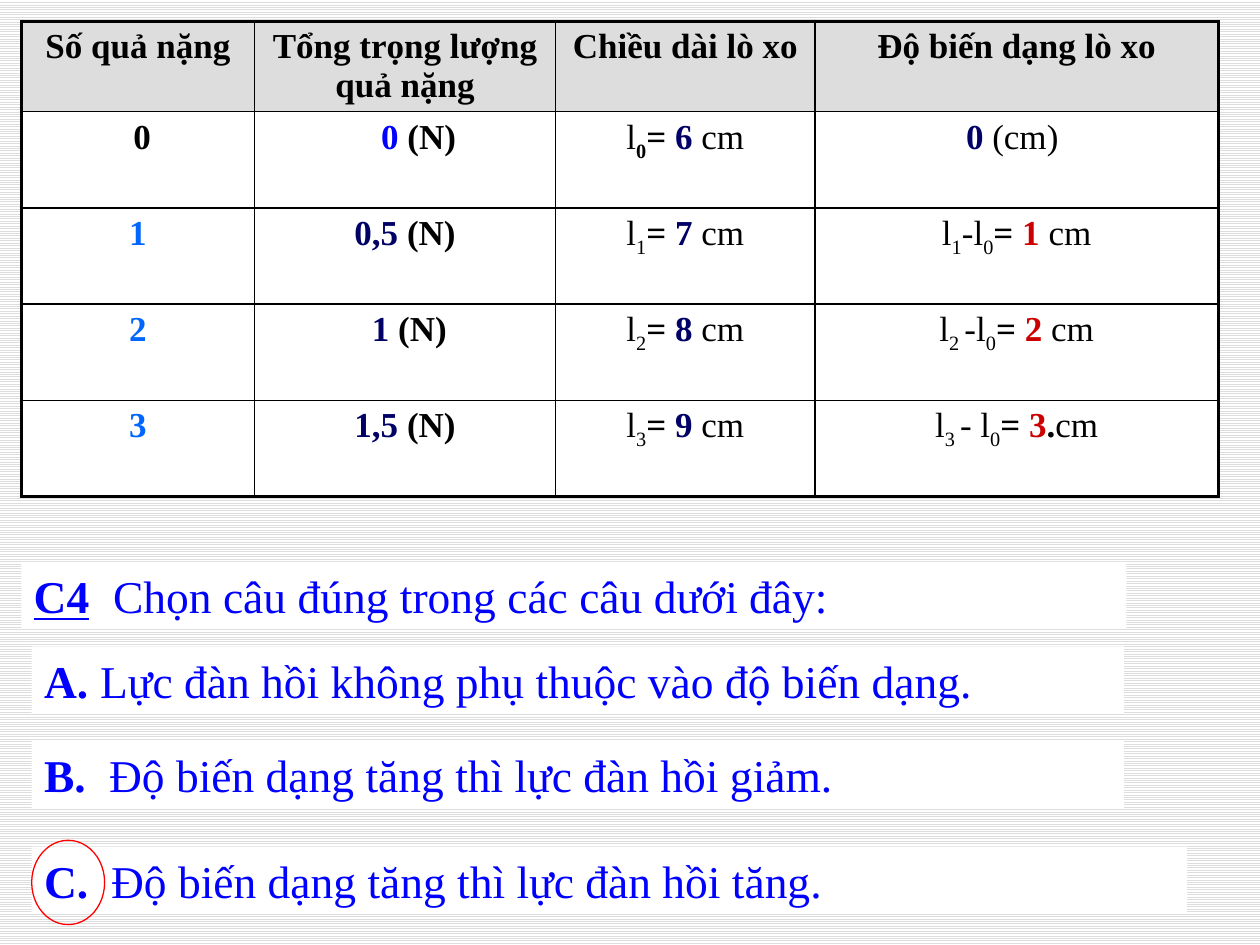
"""Build the spring stretch slide: a table of results and question C4."""
from pptx import Presentation
from pptx.dml.color import RGBColor
from pptx.enum.dml import MSO_PATTERN
from pptx.enum.shapes import MSO_SHAPE
from pptx.enum.text import MSO_ANCHOR, PP_ALIGN
from pptx.oxml import parse_xml
from pptx.oxml.ns import nsdecls
from pptx.util import Cm, Pt

THEME = {
    "font": "Times New Roman", "cell": Pt(20), "text": Pt(26),
    "black": "000000", "white": "FFFFFF", "grey": "DDDDDD", "blue": "0000FF",
    "navy": "000066", "sky": "0066FF", "red": "CC0000", "ring": "FF0000",
}
STYLES = {
    "plain": ("black", {"bold": False}),
    "bold": ("black", {"bold": True}),
    "sub": ("black", {"bold": False}),
    "boldsub": ("black", {"bold": True}),
    "blue": ("blue", {"bold": True}),
    "navy": ("navy", {"bold": True}),
    "sky": ("sky", {"bold": True}),
    "red": ("red", {"bold": True}),
    "mark": ("blue", {"bold": True, "underline": True}),
    "body": ("blue", {"bold": False}),
}


def tint(name):
    return RGBColor.from_string(THEME[name])


def write(para, parts, size):
    for text, style in parts:
        run = para.add_run()
        run.text = text
        hue, look = STYLES[style]
        for key, value in {"name": THEME["font"], "size": size, **look}.items():
            setattr(run.font, key, value)
        run.font.color.rgb = tint(hue)
        if style.endswith("sub"):
            run.font._element.set("baseline", "-25000")


deck = Presentation()
deck.slide_width, deck.slide_height = Cm(25.4), Cm(19.05)
slide = deck.slides.add_slide(deck.slide_layouts[6])
back = slide.background.fill
back.patterned()
back.pattern = MSO_PATTERN.LIGHT_HORIZONTAL
back.fore_color.rgb, back.back_color.rgb = tint("grey"), tint("white")

heads = ["Số quả nặng", "Tổng trọng lượng quả nặng", "Chiều dài lò xo", "Độ biến dạng lò xo"]
rows = [
    [[(head, "bold")] for head in heads],
    [[(" 0", "bold")],
     [("0", "blue"), (" (N)", "bold")],
     [("l", "plain"), ("0", "boldsub"), ("=", "bold"), (" 6 ", "navy"), ("cm", "plain")],
     [("0", "navy"), (" (cm) ", "plain")]],
]
trials = [
    ("1", "0,5 ", "7", "1", "-l", [("1 ", "red")]),
    ("2", " 1 ", "8", "2 ", "-l", [("2 ", "red")]),
    ("3", "1,5 ", "9", "3 ", "- l", [("3", "red"), (".", "bold")]),
]
for count, force, length, sub, minus, stretch in trials:
    rows.append([
        [(count, "sky")],
        [(force, "navy"), ("(N)", "bold")],
        [("l", "plain"), (count, "sub"), ("=", "bold"), (f" {length} ", "navy"), ("cm", "plain")],
        [("l", "plain"), (sub, "sub"), (minus, "plain"), ("0", "sub"), ("= ", "bold"),
         *stretch, ("cm", "plain")],
    ])

widths = [4.7, 6.07, 5.23, 8.13]
highs = [1.8] + [1.94] * 4
frame = slide.shapes.add_table(5, 4, Cm(0.43), Cm(0.43), Cm(sum(widths)), Cm(sum(highs)))
table = frame.table
for column, width in zip(table.columns, widths):
    column.width = Cm(width)
for y, (row, high) in enumerate(zip(rows, highs)):
    table.rows[y].height = Cm(high)
    for x, parts in enumerate(row):
        cell = table.cell(y, x)
        edges = {"L": x == 0, "R": x == 3, "T": y == 0, "B": y == 4}
        for side, outer in edges.items():
            weight = Pt(2.25 if outer else 1)
            cell._tc.get_or_add_tcPr().append(parse_xml(
                f'<a:ln{side} {nsdecls("a")} w="{weight}"><a:solidFill>'
                f'<a:srgbClr val="{THEME["black"]}"/></a:solidFill></a:ln{side}>'))
        cell.fill.solid()
        cell.fill.fore_color.rgb = tint("white" if y else "grey")
        para = cell.text_frame.paragraphs[0]
        para.alignment = PP_ALIGN.CENTER
        write(para, parts, THEME["cell"])
table.cell(1, 1).margin_left = Cm(0.8)

lines = [
    (0.43, 11.33, 22.28, 1.6, "C4", "mark", "Chọn câu đúng trong các câu dưới đây:"),
    (0.64, 13.03, 22.02, 1.13, "A.", "blue", "Lực đàn hồi không phụ thuộc vào độ biến dạng."),
    (0.64, 14.94, 22.02, 1.31, "B.", "blue", "Độ biến dạng tăng thì lực đàn hồi giảm."),
    (0.64, 17.07, 23.29, 1.35, "C.", "blue", "Độ biến dạng tăng thì lực đàn hồi tăng."),
]
for left, top, width, indent, label, style, text in lines:
    box = slide.shapes.add_shape(MSO_SHAPE.RECTANGLE, Cm(left), Cm(top), Cm(width), Cm(1.35))
    box.shadow.inherit = False
    box.fill.solid()
    box.fill.fore_color.rgb = tint("white")
    box.line.fill.background()
    frame = box.text_frame
    frame.word_wrap, frame.vertical_anchor = True, MSO_ANCHOR.TOP
    para = frame.paragraphs[0]
    para.alignment = PP_ALIGN.JUSTIFY
    for key, value in {"marL": Cm(indent), "indent": -Cm(indent)}.items():
        para._p.get_or_add_pPr().set(key, str(value))
    write(para, [(label, style), ("\t" + text, "body")], THEME["text"])

ring = slide.shapes.add_shape(MSO_SHAPE.OVAL, Cm(0.64), Cm(16.94), Cm(1.47), Cm(1.7))
ring.shadow.inherit = False
ring.fill.background()
ring.line.color.rgb, ring.line.width = tint("ring"), Pt(0.75)

deck.save("out.pptx")
